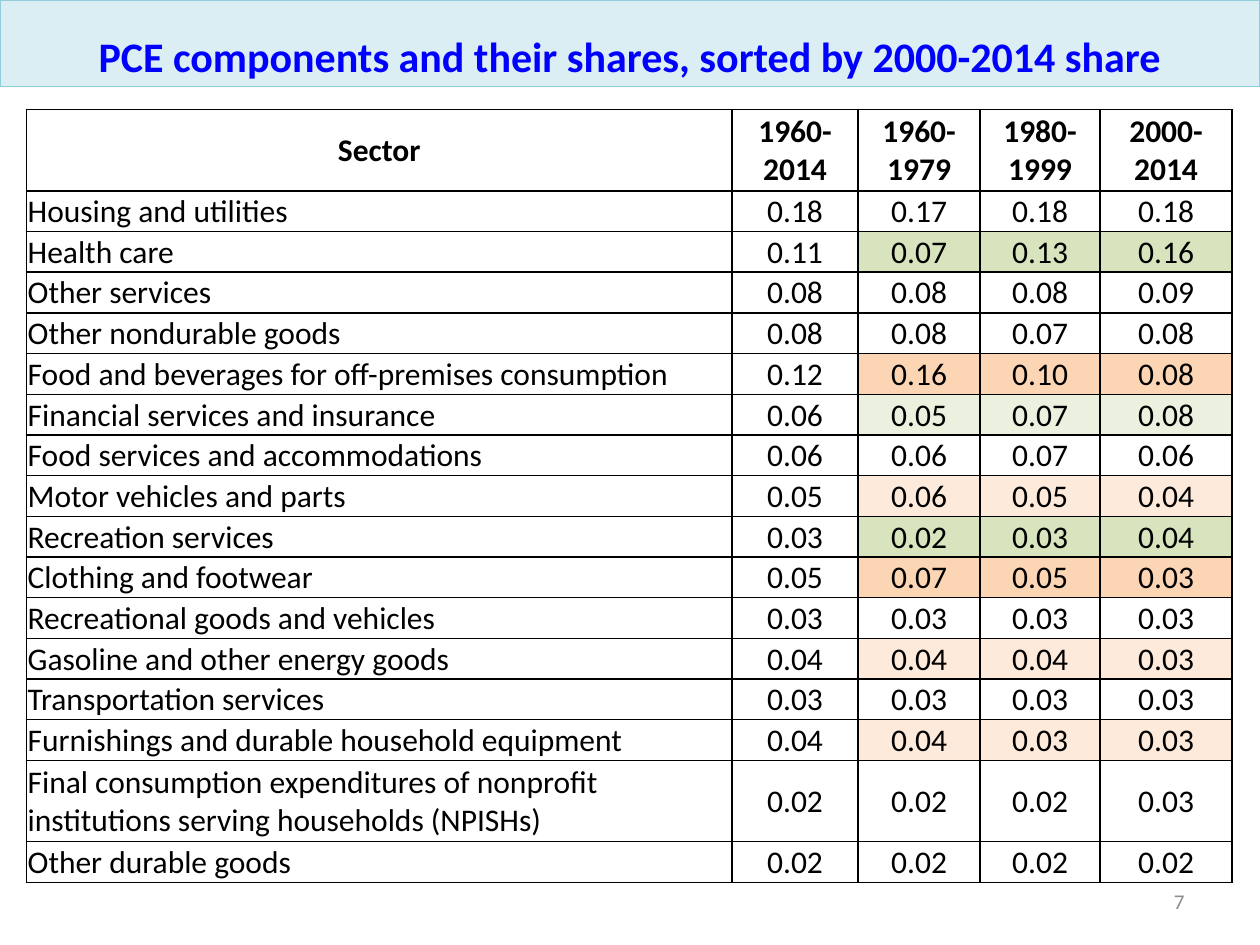
from dataclasses import dataclass

from lxml import etree
from pptx import Presentation
from pptx.dml.color import RGBColor
from pptx.enum.text import MSO_ANCHOR, MSO_AUTO_SIZE, PP_ALIGN
from pptx.oxml.ns import qn
from pptx.util import Inches, Pt

LEFT, CENTER, RIGHT = PP_ALIGN.LEFT, PP_ALIGN.CENTER, PP_ALIGN.RIGHT
MIDDLE, BOTTOM = MSO_ANCHOR.MIDDLE, MSO_ANCHOR.BOTTOM
NO_FIT = MSO_AUTO_SIZE.NONE


@dataclass(frozen=True)
class Theme:
    font: str = "Calibri"
    title_size: int = 24
    cell_size: int = 18
    page_size: int = 12
    title: str = "0000FF"
    band: str = "DBEEF4"
    edge: str = "93CDDD"
    ink: str = "000000"
    page: str = "8C8C8C"
    rise: str = "D7E4BD"
    mild_rise: str = "EBF1DE"
    fall: str = "FCD5B5"
    mild_fall: str = "FDEADA"


THEME = Theme()

HEADS = ["Sector", "1960-2014", "1960-1979", "1980-1999", "2000-2014"]
WIDTHS = [5.6, 1, 0.97, 0.95, 1.05]
ROW, TALL = 0.323, 0.645
# Sector, shares by period, shade of the three subperiods
SECTORS = [
    ("Housing and utilities", "0.18 0.17 0.18 0.18", None),
    ("Health care", "0.11 0.07 0.13 0.16", THEME.rise),
    ("Other services", "0.08 0.08 0.08 0.09", None),
    ("Other nondurable goods", "0.08 0.08 0.07 0.08", None),
    ("Food and beverages for off-premises consumption",
     "0.12 0.16 0.10 0.08", THEME.fall),
    ("Financial services and insurance",
     "0.06 0.05 0.07 0.08", THEME.mild_rise),
    ("Food services and accommodations", "0.06 0.06 0.07 0.06", None),
    ("Motor vehicles and parts", "0.05 0.06 0.05 0.04", THEME.mild_fall),
    ("Recreation services", "0.03 0.02 0.03 0.04", THEME.rise),
    ("Clothing and footwear", "0.05 0.07 0.05 0.03", THEME.fall),
    ("Recreational goods and vehicles", "0.03 0.03 0.03 0.03", None),
    ("Gasoline and other energy goods",
     "0.04 0.04 0.04 0.03", THEME.mild_fall),
    ("Transportation services", "0.03 0.03 0.03 0.03", None),
    ("Furnishings and durable household equipment",
     "0.04 0.04 0.03 0.03", THEME.mild_fall),
    ("Final consumption expenditures of nonprofit institutions "
     "serving households (NPISHs)", "0.02 0.02 0.02 0.03", None),
    ("Other durable goods", "0.02 0.02 0.02 0.02", None),
]
TALL_ROWS = (0, 15)


def rgb(code):
    return RGBColor.from_string(code)


def write(frame, text, size, color, align, bold=False):
    frame.text = text
    para = frame.paragraphs[0]
    para.alignment = align
    font = para.font
    font.name, font.size, font.bold = THEME.font, Pt(size), bold
    font.color.rgb = rgb(color)


def place(shape, box):
    shape.left, shape.top, shape.width, shape.height = map(Inches, box)


def add_title(slide, box, text):
    title = slide.shapes.title
    place(title, box)
    title.fill.solid()
    title.fill.fore_color.rgb = rgb(THEME.band)
    title.line.color.rgb = rgb(THEME.edge)
    title.line.width = Pt(0)
    frame = title.text_frame
    write(frame, text, THEME.title_size, THEME.title, CENTER, True)
    frame.vertical_anchor = BOTTOM
    frame.auto_size = NO_FIT


def add_borders(cell):
    props = cell._tc.get_or_add_tcPr()
    for spot, side in enumerate(("lnL", "lnR", "lnT", "lnB")):
        line = etree.Element(qn(f"a:{side}"), w=str(Pt(1)))
        fill = etree.SubElement(line, qn("a:solidFill"))
        etree.SubElement(fill, qn("a:srgbClr"), val=THEME.ink)
        props.insert(spot, line)


def fill_cell(cell, text, align, bold, shade):
    write(cell.text_frame, text, THEME.cell_size, THEME.ink, align, bold)
    cell.vertical_anchor = MIDDLE
    cell.margin_left = cell.margin_right = cell.margin_top = Inches(0.01)
    cell.margin_bottom = 0
    if shade:
        cell.fill.solid()
        cell.fill.fore_color.rgb = rgb(shade)
    else:
        cell.fill.background()
    add_borders(cell)


def add_shares(slide, box):
    rows = [(HEADS, None)]
    rows += [([name, *shares.split()], shade)
             for name, shares, shade in SECTORS]
    table = slide.shapes.add_table(
        len(rows), len(HEADS), *map(Inches, box)).table
    table.first_row = table.horz_banding = False
    for col, width in zip(table.columns, WIDTHS):
        col.width = Inches(width)
    for r, (texts, shade) in enumerate(rows):
        table.rows[r].height = Inches(TALL if r in TALL_ROWS else ROW)
        for c, text in enumerate(texts):
            align = LEFT if r and c == 0 else CENTER
            fill_cell(table.cell(r, c), text, align, r == 0,
                      shade if c > 1 else None)


def add_page(slide, box, number):
    frame = slide.shapes.add_textbox(*map(Inches, box)).text_frame
    frame.word_wrap = True
    frame.vertical_anchor = MIDDLE
    write(frame, number, THEME.page_size, THEME.page, RIGHT)


def main():
    deck = Presentation()
    deck.slide_width, deck.slide_height = Inches(10), Inches(7.5)
    slide = deck.slides.add_slide(deck.slide_layouts[5])
    add_page(slide, (7.17, 6.95, 2.33, 0.4), "7")
    add_title(slide, (0, 0, 10, 0.69),
              "PCE components and their shares, sorted by 2000-2014 share")
    add_shares(slide, (0.21, 0.87, 9.57, 6.14))
    deck.save("out.pptx")


if __name__ == "__main__":
    main()
